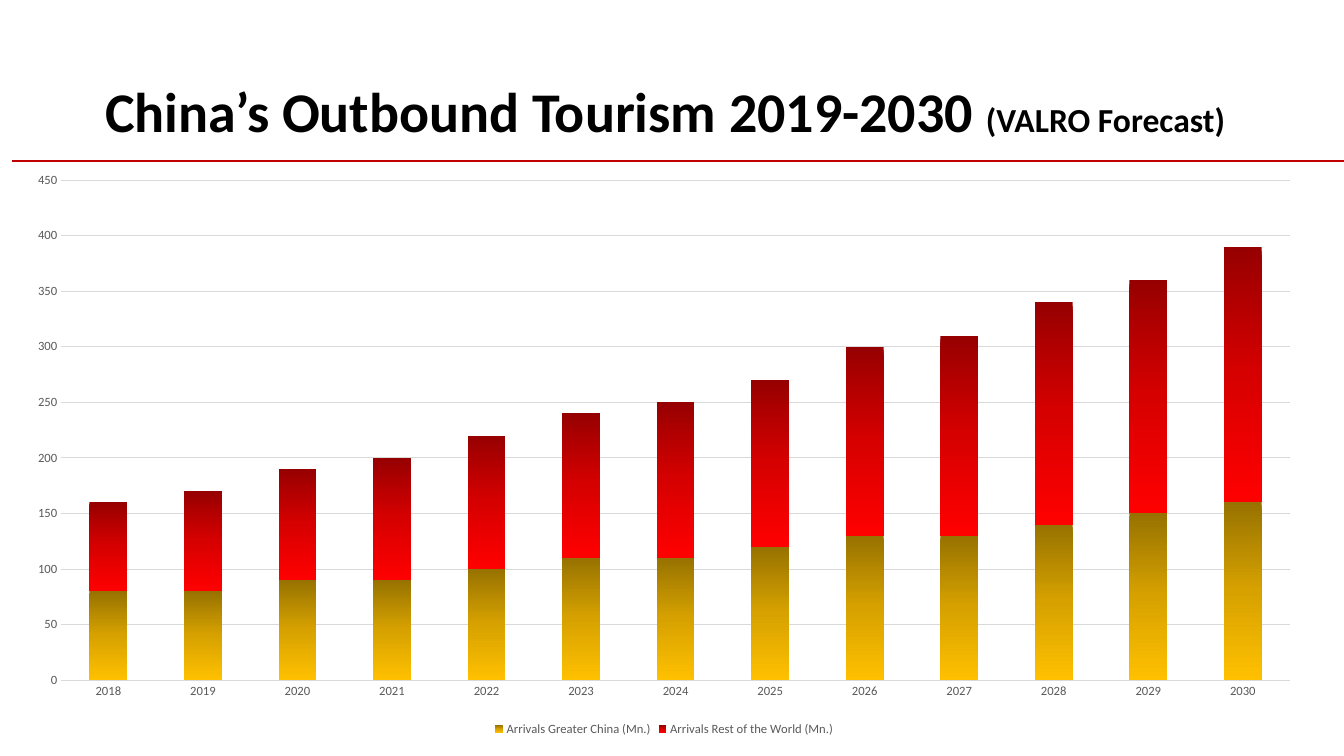
"""Build the slide on China's outbound tourism, a stacked column forecast."""
from copy import deepcopy

from pptx import Presentation
from pptx.chart.data import CategoryChartData
from pptx.dml.color import RGBColor
from pptx.enum.chart import XL_CHART_TYPE, XL_LEGEND_POSITION, XL_TICK_MARK
from pptx.enum.shapes import MSO_CONNECTOR
from pptx.enum.text import MSO_ANCHOR, PP_ALIGN
from pptx.oxml.ns import qn
from pptx.util import Cm, Pt

STACKED = XL_CHART_TYPE.COLUMN_STACKED
BOTTOM = XL_LEGEND_POSITION.BOTTOM
NO_TICK = XL_TICK_MARK.NONE
STRAIGHT = MSO_CONNECTOR.STRAIGHT
MIDDLE = MSO_ANCHOR.MIDDLE
CENTER = PP_ALIGN.CENTER

FONT = "Calibri"
HEX = {"ink": "000000", "label": "595959", "grid": "D9D9D9", "rule": "C00000"}
TITLE = [("China’s Outbound Tourism 2019-2030 ", 40), ("(VALRO Forecast)", 24)]
YEARS = [str(year) for year in range(2018, 2031)]
SERIES = [
    ("Arrivals Greater China (Mn.)",
     (80, 80, 90, 90, 100, 110, 110, 120, 130, 130, 140, 150, 160),
     ("977200", "D7A200", "FFC000")),
    ("Arrivals Rest of the World (Mn.)",
     (80, 90, 100, 110, 120, 130, 140, 150, 170, 180, 200, 210, 230),
     ("970000", "D70000", "FF0000")),
]
SCALE = {"minimum_scale": 0, "maximum_scale": 450, "major_unit": 50}
BARS = {"gap_width": 150, "overlap": 100, "vary_by_categories": False}
LEFT, TOP = 0.3, 4.06
TITLE_BOX = {"left": Cm(0.76), "top": Cm(1.04), "width": Cm(32), "height": Cm(3.68)}


def apply(item, values):
    for name, value in values.items():
        setattr(item, name, value)


def style(font, size, tone, bold=False):
    apply(font, {"name": FONT, "size": Pt(size), "bold": bold})
    font.color.rgb = RGBColor.from_string(HEX[tone])


def stroke(line, tone, width):
    line.color.rgb = RGBColor.from_string(HEX[tone])
    line.width = Pt(width)


def shade(series, tones):
    fill = series.format.fill
    fill.gradient()
    fill.gradient_angle = 270
    stops = series._element.find(".//" + qn("a:gsLst"))
    stops.insert(1, deepcopy(stops[0]))
    for i, (stop, tone) in enumerate(zip(fill.gradient_stops, tones)):
        stop.color.rgb = RGBColor.from_string(tone)
        stop.position = i / 2


def add_title(slide):
    title = slide.shapes.title
    apply(title, TITLE_BOX)
    apply(title.text_frame, {"vertical_anchor": MIDDLE, "word_wrap": True})
    para = title.text_frame.paragraphs[0]
    apply(para, {"alignment": CENTER, "line_spacing": 0.9})
    for text, size in TITLE:
        run = para.add_run()
        run.text = text
        style(run.font, size, "ink", True)


def add_rule(slide):
    rule = slide.shapes.add_connector(STRAIGHT, Cm(LEFT), Cm(TOP), Cm(34.16), Cm(TOP))
    stroke(rule.line, "rule", 1.5)
    props = rule._element.spPr
    props.append(props.makeelement(qn("a:effectLst"), {}))


def add_plot(slide):
    data = CategoryChartData(number_format="0")
    data.categories = YEARS
    for name, values, _ in SERIES:
        data.add_series(name, values)
    chart = slide.shapes.add_chart(
        STACKED, Cm(LEFT), Cm(TOP), Cm(32.87), Cm(14.6), data).chart
    style(chart.font, 10, "ink")
    apply(chart, {"has_title": False, "has_legend": True})
    apply(chart.legend, {"position": BOTTOM, "include_in_layout": False})
    style(chart.legend.font, 9, "label")
    cats, vals = chart.category_axis, chart.value_axis
    for axis in (cats, vals):
        apply(axis, {"major_tick_mark": NO_TICK, "minor_tick_mark": NO_TICK})
        style(axis.tick_labels.font, 9, "label")
    stroke(cats.format.line, "grid", 0.75)
    apply(vals, SCALE)
    vals.format.line.fill.background()
    stroke(vals.major_gridlines.format.line, "grid", 0.75)
    apply(vals.tick_labels, {"number_format": "0", "number_format_is_linked": False})
    plot = chart.plots[0]
    apply(plot, BARS)
    for series, (_, _, tones) in zip(plot.series, SERIES):
        shade(series, tones)


def main():
    deck = Presentation()
    apply(deck, {"slide_width": Cm(33.87), "slide_height": Cm(19.05)})
    slide = deck.slides.add_slide(deck.slide_layouts[5])
    add_title(slide)
    add_rule(slide)
    add_plot(slide)
    deck.save("out.pptx")


if __name__ == "__main__":
    main()
